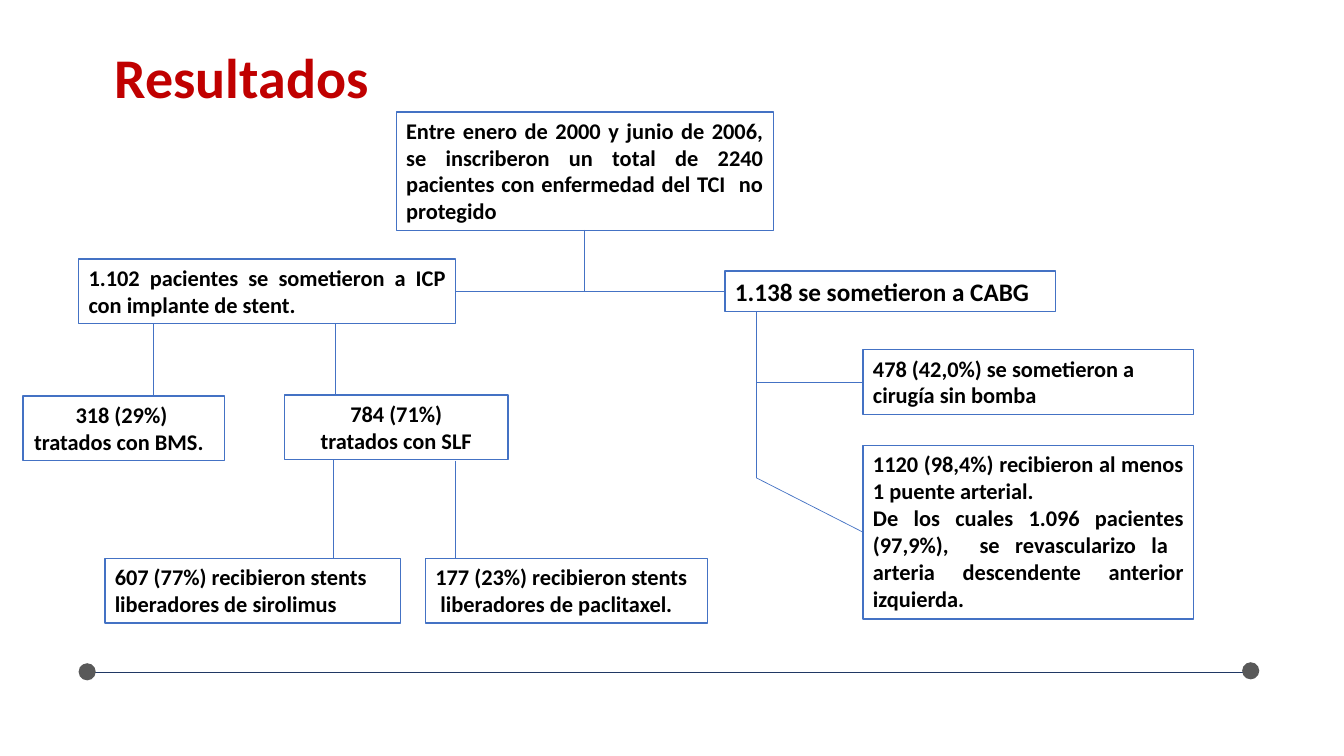
from pptx import Presentation
from pptx.dml.color import RGBColor
from pptx.enum import shapes, text
from pptx.oxml.ns import qn
from pptx.util import Inches, Pt

FONT = "Calibri"
BLUE, NAVY, GRAY, RED = "4472C4", "203864", "595959", "C00000"
LEFT, CENTER, JUSTIFY = (
    text.PP_ALIGN.LEFT, text.PP_ALIGN.CENTER, text.PP_ALIGN.JUSTIFY)

# Patient groups: left, top, width, height, alignment, size, paragraphs
GROUPS = [
    (3.93, 1.11, 3.74, 1.18, JUSTIFY, 16,
     ["Entre enero de 2000 y junio de 2006, se inscriberon un total de 2240 "
      "pacientes con enfermedad del TCI  no protegido"]),
    (0.78, 2.57, 3.74, 0.64, JUSTIFY, 16,
     ["1.102 pacientes se sometieron a ICP con implante de stent."]),
    (0.23, 3.93, 2, 0.64, CENTER, 16,
     ["318 (29%) ", "tratados con BMS.  "]),
    (2.82, 3.92, 2.22, 0.64, CENTER, 16,
     ["784 (71%)", "tratados con SLF"]),
    (7.19, 2.69, 3.28, 0.4, LEFT, 18,
     ["1.138 se sometieron a CABG"]),
    (1.04, 5.54, 2.93, 0.64, LEFT, 16,
     ["607 (77%) recibieron stents liberadores de sirolimus"]),
    (4.22, 5.54, 2.8, 0.64, LEFT, 16,
     ["177 (23%) recibieron stents", " liberadores de paclitaxel."]),
    (8.56, 3.47, 3.28, 0.64, LEFT, 16,
     ["478 (42,0%) se sometieron a cirugía sin bomba"]),
    (8.56, 4.42, 3.28, 1.72, JUSTIFY, 16,
     ["1120 (98,4%) recibieron al menos 1 puente arterial.",
      "De los cuales 1.096 pacientes (97,9%),  se revascularizo la  arteria "
      "descendente anterior izquierda. "]),
]

# Branches of the tree: x1, y1, x2, y2
BRANCHES = [
    (5.8, 2.28, 5.8, 2.89),
    (4.52, 2.89, 7.19, 2.89),
    (3.33, 3.21, 3.33, 3.92),
    (1.52, 3.21, 1.52, 3.92),
    (4.52, 4.57, 4.52, 5.54),
    (3.31, 4.56, 3.31, 5.54),
    (7.5, 3.09, 7.5, 4.74),
    (8.56, 5.28, 7.5, 4.74),
    (8.56, 3.79, 7.5, 3.79),
]


def color(value):
    return RGBColor.from_string(value)


def write(frame, lines, size, ink, align=LEFT):
    frame.word_wrap = True
    for i, line in enumerate(lines):
        paragraph = frame.paragraphs[0] if i == 0 else frame.add_paragraph()
        paragraph.text = line
        paragraph.alignment = align
        font = paragraph.font
        font.name, font.size, font.bold = FONT, Pt(size), True
        font.color.rgb = color(ink)


def add_title(slide, title):
    heading = slide.shapes.add_textbox(
        Inches(1.04), Inches(0.27), Inches(11.5), Inches(1.06))
    write(heading.text_frame, [title], 40, RED)
    heading.text_frame.vertical_anchor = text.MSO_ANCHOR.MIDDLE
    heading.text_frame.paragraphs[0].line_spacing = 0.9


def add_group(slide, left, top, width, height, align, size, lines):
    group = slide.shapes.add_shape(
        shapes.MSO_SHAPE.RECTANGLE,
        Inches(left), Inches(top), Inches(width), Inches(height))
    group.shadow.inherit = False
    group.fill.solid()
    group.fill.fore_color.rgb = color("FFFFFF")
    group.line.color.rgb = color(BLUE)
    group.line.width = Pt(1)
    write(group.text_frame, lines, size, "000000", align)
    group.text_frame.vertical_anchor = text.MSO_ANCHOR.TOP
    group.text_frame.auto_size = text.MSO_AUTO_SIZE.SHAPE_TO_FIT_TEXT


def add_line(slide, x1, y1, x2, y2, ink=BLUE):
    line = slide.shapes.add_connector(
        shapes.MSO_CONNECTOR.STRAIGHT,
        Inches(x1), Inches(y1), Inches(x2), Inches(y2))
    line.line.color.rgb = color(ink)
    line.line.width = Pt(0.5)
    properties = line._element.spPr
    properties.append(properties.makeelement(qn("a:effectLst"), {}))


def add_dot(slide, left, top):
    dot = slide.shapes.add_shape(
        shapes.MSO_SHAPE.OVAL,
        Inches(left), Inches(top), Inches(0.17), Inches(0.17))
    dot.shadow.inherit = False
    dot.fill.solid()
    dot.fill.fore_color.rgb = color(GRAY)
    dot.line.fill.background()


def main():
    deck = Presentation()
    deck.slide_width, deck.slide_height = Inches(13.33), Inches(7.5)
    slide = deck.slides.add_slide(deck.slide_layouts[6])

    # Footer rule with a dot at each end
    add_line(slide, 0.9, 6.67, 12.38, 6.67, NAVY)
    add_dot(slide, 12.32, 6.57)
    add_dot(slide, 0.78, 6.58)

    # Title and patient flow
    add_title(slide, "Resultados")
    for group in GROUPS:
        add_group(slide, *group)
    for branch in BRANCHES:
        add_line(slide, *branch)

    deck.save("out.pptx")


if __name__ == "__main__":
    main()
